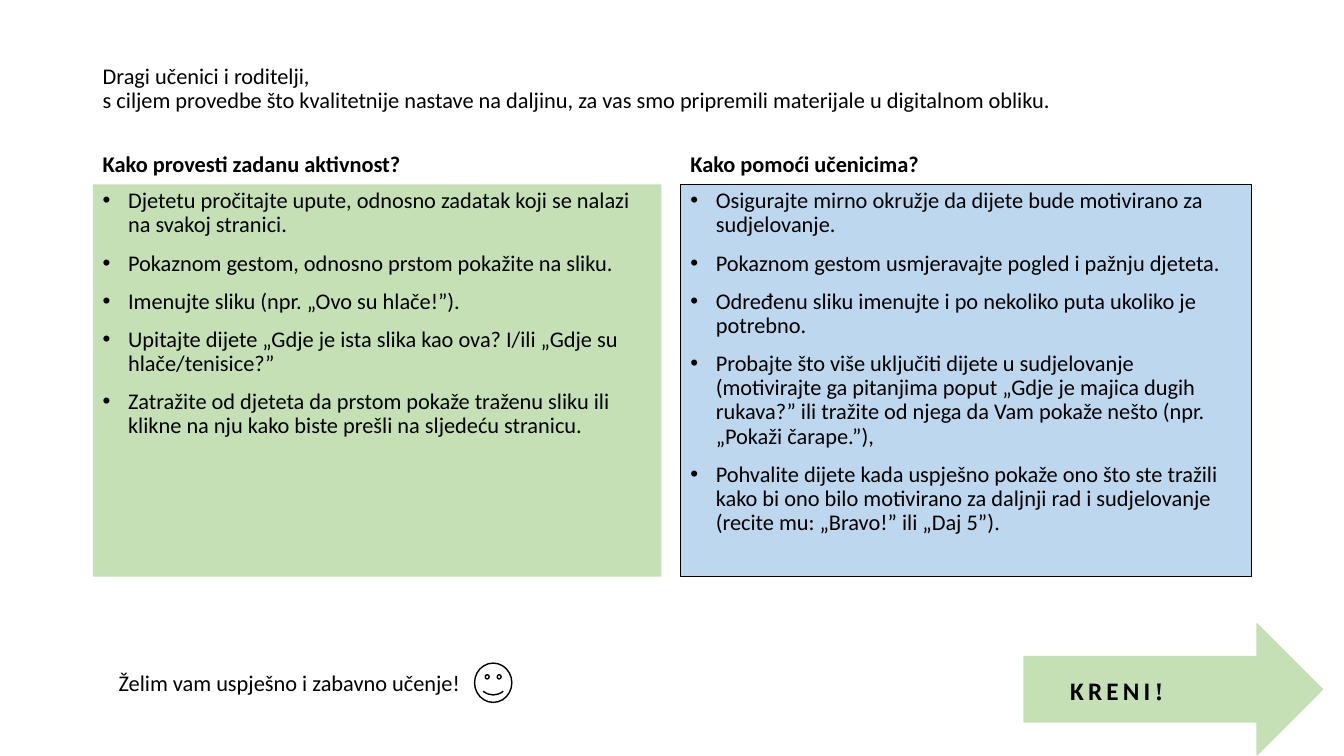
import pptx
import pptx.util
import pptx.dml.color
import pptx.enum.shapes
import pptx.enum.text
import pptx.oxml
import pptx.oxml.ns
from lxml import etree
from pptx.util import Cm

ANCHOR = pptx.enum.text.MSO_ANCHOR
SHAPE = pptx.enum.shapes.MSO_SHAPE
GREEN, BLUE, BLACK = "C5E0B4", "BDD7EE", "000000"


def color(value):
    return pptx.dml.color.RGBColor.from_string(value)


def write(box, lines, anchor=ANCHOR.TOP, size=16, bold=False, spacing=0.9, before=0):
    """Fill a box; each line is a list of (text, font) pairs."""
    frame = box.text_frame
    frame.word_wrap = True
    frame.vertical_anchor = anchor
    layout = {"alignment": pptx.enum.text.PP_ALIGN.LEFT, "line_spacing": spacing,
              "space_before": pptx.util.Pt(before)}
    for index, pieces in enumerate(lines):
        para = frame.paragraphs[0] if index == 0 else frame.add_paragraph()
        for name, value in layout.items():
            setattr(para, name, value)
        for text, font in pieces:
            span = para.add_run()
            span.text = text
            look = {"name": font, "size": pptx.util.Pt(size), "bold": bold}
            for name, value in look.items():
                setattr(span.font, name, value)
            span.font.color.rgb = color(BLACK)
    return frame


deck = pptx.Presentation()
deck.slide_width, deck.slide_height = Cm(33.87), Cm(19.05)
page = deck.slides.add_slide(deck.slide_layouts[6])
shapes = page.shapes

# Greeting
greeting = shapes.add_textbox(Cm(2.34), Cm(0.41), Cm(29.21), Cm(3.68))
write(greeting, [
    [("Dragi učenici i roditelji,", "Calibri")],
    [("s ciljem provedbe što kvalitetnije nastave na daljinu, "
      "za vas smo pripremili materijale u digitalnom obliku.", "Calibri")],
], ANCHOR.MIDDLE)

# Two columns: heading above a coloured panel of bullets
columns = [
    (2.34, 14.33, GREEN, None, "Kako provesti zadanu aktivnost?", [
        "Djetetu pročitajte upute, odnosno zadatak koji se nalazi na svakoj stranici.",
        "Pokaznom gestom, odnosno prstom pokažite na sliku.",
        "Imenujte sliku (npr. „Ovo su hlače!”).",
        "Upitajte dijete „Gdje je ista slika kao ova? I/ili „Gdje su hlače/tenisice?”",
        "Zatražite od djeteta da prstom pokaže traženu sliku ili klikne na nju "
        "kako biste prešli na sljedeću stranicu.",
    ], ""),
    (17.15, 14.4, BLUE, BLACK, "Kako pomoći učenicima?", [
        "Osigurajte mirno okružje da dijete bude motivirano za sudjelovanje.",
        "Pokaznom gestom usmjeravajte pogled i pažnju djeteta.",
        "Određenu sliku imenujte i po nekoliko puta ukoliko je potrebno.",
        "Probajte što više uključiti dijete u sudjelovanje (motivirajte ga pitanjima "
        "poput „Gdje je majica dugih rukava?” ili tražite od njega da Vam pokaže "
        "nešto (npr. „Pokaži čarape.”),",
        "Pohvalite dijete kada uspješno pokaže ono što ste tražili kako bi ono bilo "
        "motivirano za daljnji rad i sudjelovanje (recite mu: „Bravo!” ili „Daj 5”)",
    ], "."),
]
for left, width, fill, outline, heading, bullets, ending in columns:
    title = shapes.add_textbox(Cm(left), Cm(3.66), Cm(width), Cm(0.94))
    write(title, [[(heading, "Calibri")]], ANCHOR.BOTTOM, bold=True, before=10)

    panel = shapes.add_shape(SHAPE.RECTANGLE, Cm(left), Cm(4.65), Cm(width), Cm(9.88))
    panel.shadow.inherit = False
    panel.fill.solid()
    panel.fill.fore_color.rgb = color(fill)
    if outline:
        panel.line.color.rgb = color(outline)
        panel.line.width = pptx.util.Pt(0.75)
    else:
        panel.line.fill.background()
    lines = [[(text, "Calibri")] for text in bullets]
    if ending:
        lines[-1].append((ending, "Times New Roman"))
    for para in write(panel, lines, before=10).paragraphs:
        properties = para._p.get_or_add_pPr()
        properties.set("marL", str(Cm(0.64)))
        properties.set("indent", str(-Cm(0.64)))
        for tag, name, value in (("a:buFont", "typeface", "Arial"), ("a:buChar", "char", "•")):
            etree.SubElement(properties, pptx.oxml.ns.qn(tag)).set(name, value)

# Good wishes with a smiley
wishes = shapes.add_textbox(Cm(2.74), Cm(16.74), Cm(23.47), Cm(0.94))
write(wishes, [[("Želim vam uspješno i zabavno učenje!", "Calibri")]], spacing=1.0)

smiley = shapes.add_shape(SHAPE.SMILEY_FACE, Cm(11.96), Cm(16.71), Cm(0.94), Cm(0.99))
smiley.fill.background()

# Start arrow
arrow = shapes.add_shape(SHAPE.RIGHT_ARROW, Cm(25.81), Cm(15.72), Cm(7.52), Cm(3.3))
arrow.fill.solid()
arrow.fill.fore_color.rgb = color(GREEN)
for shape, outline in ((smiley, BLACK), (arrow, GREEN)):
    shape.shadow.inherit = False
    shape.line.color.rgb = color(outline)
    shape.line.width = pptx.util.Pt(1)

start = shapes.add_textbox(Cm(26.72), Cm(16.89), Cm(6.6), Cm(1.02))
label = write(start, [[("KRENI", "Calibri"), ("!", "Times New Roman")]],
              size=18, bold=True, spacing=1.0)
for span in label.paragraphs[0].runs:
    span._r.get_or_add_rPr().set("spc", "300")

deck.save("out.pptx")
